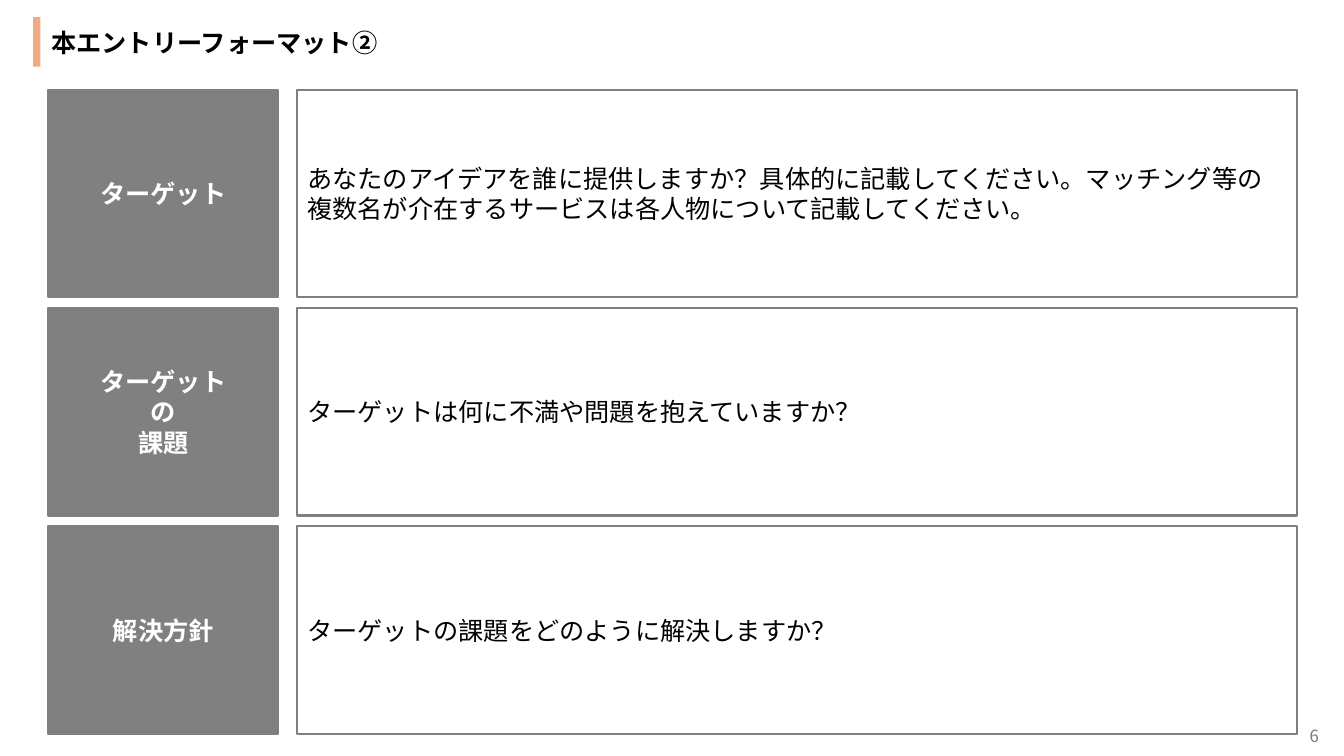
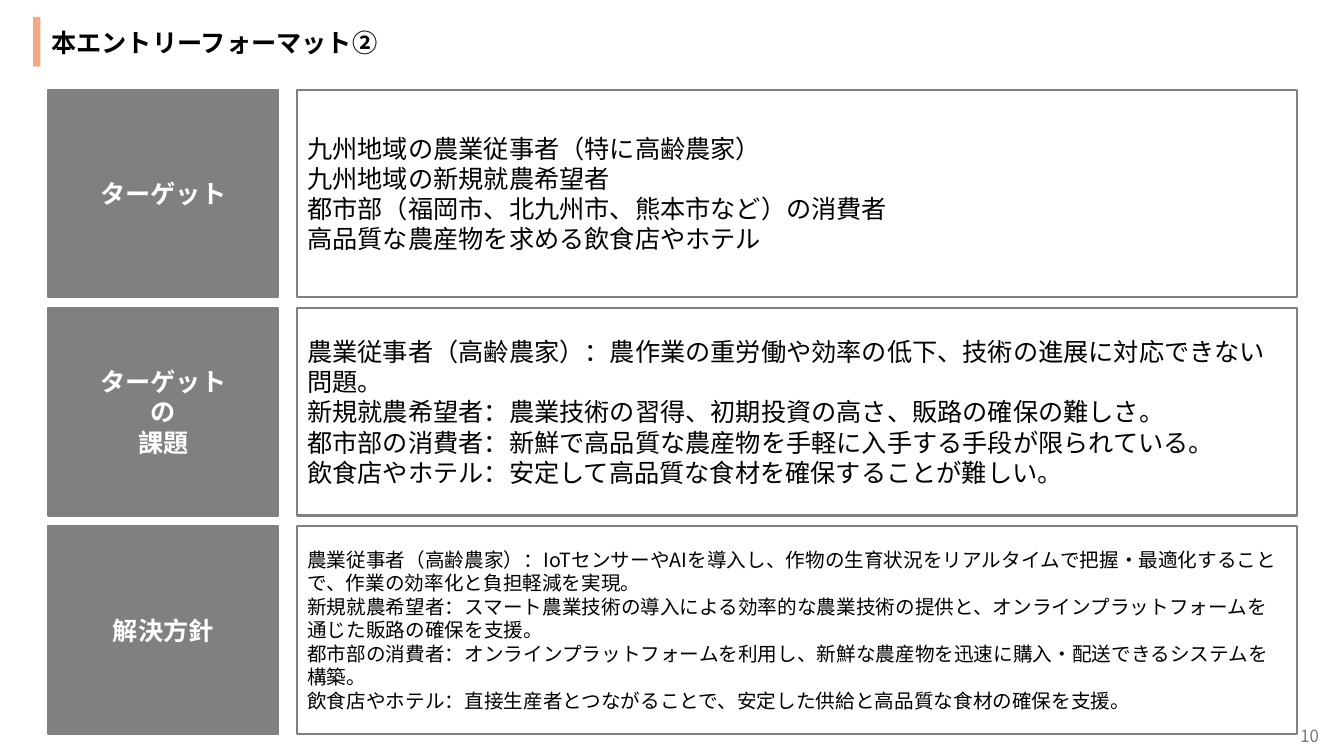
from dataclasses import dataclass

from lxml.etree import SubElement
from pptx import Presentation
from pptx.dml.color import RGBColor
from pptx.enum.shapes import MSO_SHAPE
from pptx.enum.text import MSO_ANCHOR as Anchor, MSO_AUTO_SIZE as AutoSize, PP_ALIGN as Align
from pptx.oxml.ns import qn
from pptx.shapes.autoshape import Shape
from pptx.slide import Slide
from pptx.util import Inches, Pt


@dataclass(frozen=True)
class Theme:
    font: str = "Noto Sans CJK JP"
    ink: str = "000000"
    white: str = "FFFFFF"
    gray: str = "808080"
    accent: str = "F2AA84"
    number_gray: str = "797979"
    body: int = 18
    dense: int = 14
    number: int = 12
    border: float = 1.5


@dataclass(frozen=True)
class Area:
    left: float
    top: float
    width: float
    height: float

    def lengths(self) -> tuple[Inches, ...]:
        return tuple(Inches(n) for n in (self.left, self.top, self.width, self.height))


@dataclass(frozen=True)
class Answer:
    text: str
    size: int


@dataclass(frozen=True)
class EntryPage:
    number: int
    answers: tuple[Answer, ...]


THEME = Theme()
TITLE = "本エントリーフォーマット②"
LABELS = ("ターゲット", "ターゲット\nの\n課題", "解決方針")

TITLE_AREA = Area(0.41, 0.22, 3.48, 0.4)
ACCENT_AREA = Area(0.33, 0.17, 0.07, 0.49)
NUMBER_AREA = Area(10.18, 7.1, 3, 0.4)
LABEL_LEFT, LABEL_WIDTH = 0.48, 2.28
ANSWER_LEFT, ANSWER_WIDTH = 2.95, 9.91
FIRST_TOP, LAST_TOP, ROW_HEIGHT = 0.89, 5.22, 2.06
ROW_PITCH = (LAST_TOP - FIRST_TOP) / (len(LABELS) - 1)

PAGES = (
    EntryPage(6, (
        Answer("あなたのアイデアを誰に提供しますか？具体的に記載してください。"
               "マッチング等の複数名が介在するサービスは各人物について記載してください。", THEME.body),
        Answer("ターゲットは何に不満や問題を抱えていますか？", THEME.body),
        Answer("ターゲットの課題をどのように解決しますか？", THEME.body),
    )),
    EntryPage(10, (
        Answer("九州地域の農業従事者（特に高齢農家）\n"
               "九州地域の新規就農希望者\n"
               "都市部（福岡市、北九州市、熊本市など）の消費者\n"
               "高品質な農産物を求める飲食店やホテル", THEME.body),
        Answer("農業従事者（高齢農家）：農作業の重労働や効率の低下、技術の進展に対応できない問題。\n"
               "新規就農希望者：農業技術の習得、初期投資の高さ、販路の確保の難しさ。\n"
               "都市部の消費者：新鮮で高品質な農産物を手軽に入手する手段が限られている。\n"
               "飲食店やホテル：安定して高品質な食材を確保することが難しい。", THEME.body),
        Answer("農業従事者（高齢農家）：IoTセンサーやAIを導入し、作物の生育状況を"
               "リアルタイムで把握・最適化することで、作業の効率化と負担軽減を実現。\n"
               "新規就農希望者：スマート農業技術の導入による効率的な農業技術の提供と、"
               "オンラインプラットフォームを通じた販路の確保を支援。\n"
               "都市部の消費者：オンラインプラットフォームを利用し、"
               "新鮮な農産物を迅速に購入・配送できるシステムを構築。\n"
               "飲食店やホテル：直接生産者とつながることで、"
               "安定した供給と高品質な食材の確保を支援。", THEME.dense),
    )),
)


def write_text(box: Shape, text: str, size: int, color: str, bold: bool = False,
               align: Align = Align.LEFT, anchor: Anchor = Anchor.MIDDLE) -> None:
    frame = box.text_frame
    frame.text = text
    frame.word_wrap = True
    frame.vertical_anchor = anchor
    for para in frame.paragraphs:
        para.alignment = align
        for span in para.runs:
            span.font.size = Pt(size)
            span.font.bold = bold
            span.font.color.rgb = RGBColor.from_string(color)
            span.font.name = THEME.font
            # Japanese glyphs take their typeface from a:ea
            SubElement(span.font._element, qn("a:ea"), typeface=THEME.font)


def add_rectangle(page: Slide, area: Area, fill: str, line: str | None = None) -> Shape:
    box = page.shapes.add_shape(MSO_SHAPE.RECTANGLE, *area.lengths())
    box.shadow.inherit = False
    box.fill.solid()
    box.fill.fore_color.rgb = RGBColor.from_string(fill)
    if line is None:
        box.line.fill.background()
    else:
        box.line.color.rgb = RGBColor.from_string(line)
        box.line.width = Pt(THEME.border)
    return box


def add_title(page: Slide) -> None:
    box = page.shapes.add_textbox(*TITLE_AREA.lengths())
    write_text(box, TITLE, THEME.body, THEME.ink, bold=True, anchor=Anchor.TOP)
    box.text_frame.word_wrap = False
    box.text_frame.auto_size = AutoSize.SHAPE_TO_FIT_TEXT
    add_rectangle(page, ACCENT_AREA, THEME.accent)


def add_row(page: Slide, index: int, label: str, answer: Answer) -> None:
    top = FIRST_TOP + index * ROW_PITCH
    label_area = Area(LABEL_LEFT, top, LABEL_WIDTH, ROW_HEIGHT)
    label_box = add_rectangle(page, label_area, THEME.gray, THEME.gray)
    write_text(label_box, label, THEME.body, THEME.white, bold=True, align=Align.CENTER)
    answer_area = Area(ANSWER_LEFT, top, ANSWER_WIDTH, ROW_HEIGHT)
    answer_box = add_rectangle(page, answer_area, THEME.white, THEME.gray)
    write_text(answer_box, answer.text, answer.size, THEME.ink)


def add_page_number(page: Slide, number: int) -> None:
    box = page.shapes.add_textbox(*NUMBER_AREA.lengths())
    write_text(box, str(number), THEME.number, THEME.number_gray, align=Align.RIGHT)


def main() -> None:
    deck = Presentation()
    deck.slide_width, deck.slide_height = Inches(13.33), Inches(7.5)
    blank = deck.slide_layouts[6]
    for entry in PAGES:
        page = deck.slides.add_slide(blank)
        add_title(page)
        for index, (label, answer) in enumerate(zip(LABELS, entry.answers)):
            add_row(page, index, label, answer)
        add_page_number(page, entry.number)
    deck.save("out.pptx")


if __name__ == "__main__":
    main()
